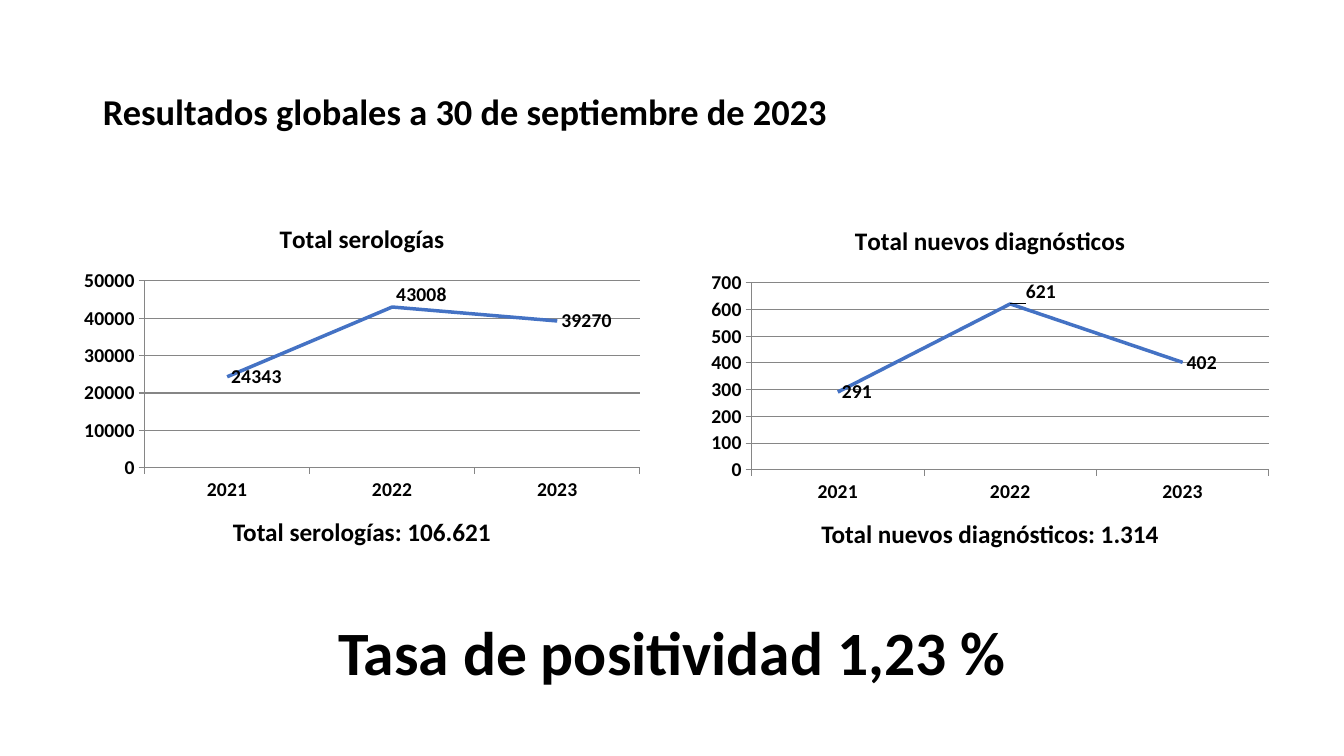
from pptx import Presentation
from pptx.chart.data import CategoryChartData as Data
from pptx.dml.color import RGBColor
from pptx.enum.chart import XL_CHART_TYPE as Kind, XL_LABEL_POSITION as Spot
from pptx.enum.chart import XL_MARKER_STYLE as Mark, XL_TICK_MARK as Tick
from pptx.enum.text import MSO_ANCHOR as Anchor, PP_ALIGN as Align
from pptx.oxml import parse_xml
from pptx.oxml.ns import nsdecls
from pptx.util import Inches, Pt

BLACK = RGBColor(0, 0, 0)
BLUE = RGBColor(0x44, 0x72, 0xC4)
GREY = RGBColor(0x86, 0x86, 0x86)
YEARS = ("2021", "2022", "2023")
LEFT = {"alignment": Align.LEFT, "line_spacing": 0.9}
MID = {"alignment": Align.CENTER}
WIDE = {"alignment": Align.CENTER, "line_spacing": 0.9}


def style(font, size):
    form = {"name": "Calibri", "size": Pt(size), "bold": True}
    for key, value in form.items():
        setattr(font, key, value)
    font.color.rgb = BLACK


def write(shape, text, size, form, anchor=Anchor.MIDDLE):
    frame = shape.text_frame
    frame.word_wrap = True
    frame.vertical_anchor = anchor
    para = frame.paragraphs[0]
    for key, value in form.items():
        setattr(para, key, value)
    run = para.add_run()
    run.text = text
    style(run.font, size)


def add_text(slide, box, *args):
    write(slide.shapes.add_textbox(*map(Inches, box)), *args)


def set_line(line, color, width):
    line.color.rgb = color
    line.width = Pt(width)


def set_axis(axis):
    axis.major_tick_mark = Tick.OUTSIDE
    axis.minor_tick_mark = Tick.NONE
    style(axis.tick_labels.font, 14)
    set_line(axis.format.line, GREY, 0.75)


def lift_peak(series, shift):
    label = series.points[1].data_label
    label.position = Spot.RIGHT
    style(label.font, 14)
    node = series._element.xpath("c:dLbls/c:dLbl/c:idx")[0]
    node.addnext(parse_xml(
        f'<c:layout {nsdecls("c")}><c:manualLayout>'
        f'<c:x val="{shift[0]}"/><c:y val="{shift[1]}"/>'
        '</c:manualLayout></c:layout>'))


def add_trend(slide, box, title, name, values, shift):
    data = Data()
    data.categories = YEARS
    data.add_series(name, values)
    chart = slide.shapes.add_chart(Kind.LINE, *map(Inches, box), data).chart
    style(chart.font, 10)
    chart.has_legend = False
    chart.has_title = True
    head = chart.chart_title
    head.include_in_layout = False
    run = head.text_frame.paragraphs[0].add_run()
    run.text = title
    style(run.font, 18)
    for axis in (chart.category_axis, chart.value_axis):
        set_axis(axis)
    chart.value_axis.has_major_gridlines = True
    set_line(chart.value_axis.major_gridlines.format.line, GREY, 0.75)
    plot = chart.plots[0]
    plot.vary_by_categories = False
    series = plot.series[0]
    series.smooth = False
    series.marker.style = Mark.NONE
    set_line(series.format.line, BLUE, 2.5)
    labels = series.data_labels
    labels.show_value = True
    labels.position = Spot.RIGHT
    style(labels.font, 14)
    lift_peak(series, shift)


def main():
    """Build the slide of global results and save it."""
    deck = Presentation()
    deck.slide_width = Inches(13.33)
    deck.slide_height = Inches(7.5)
    slide = deck.slides.add_slide(deck.slide_layouts[5])
    title = slide.shapes.title
    spot = {"left": 0.92, "top": 0.4, "width": 11.5, "height": 1.45}
    for key, value in spot.items():
        setattr(title, key, Inches(value))
    write(title, "Resultados globales a 30 de septiembre de 2023", 26, LEFT)
    trends = (
        (0.72, 2.04, 5.74, "Total serologías", "Total serologías",
         (24343, 43008, 39270), "106.621", (0, -0.04)),
        (6.94, 2.06, 5.76, "Total nuevos diagnósticos", "Series 1",
         (291, 621, 402), "1.314", (0.02, -0.04)),
    )
    for left, top, width, topic, name, values, total, shift in trends:
        add_trend(slide, (left, top, width, 3), topic, name, values, shift)
        add_text(slide, (left, top + 3.03, width, 0.42),
                 f"{topic}: {total}", 18, MID, Anchor.TOP)
    add_text(slide, (0.92, 5.78, 11.5, 1.45),
             "Tasa de positividad 1,23 %", 44, WIDE)
    deck.save("out.pptx")


if __name__ == "__main__":
    main()
